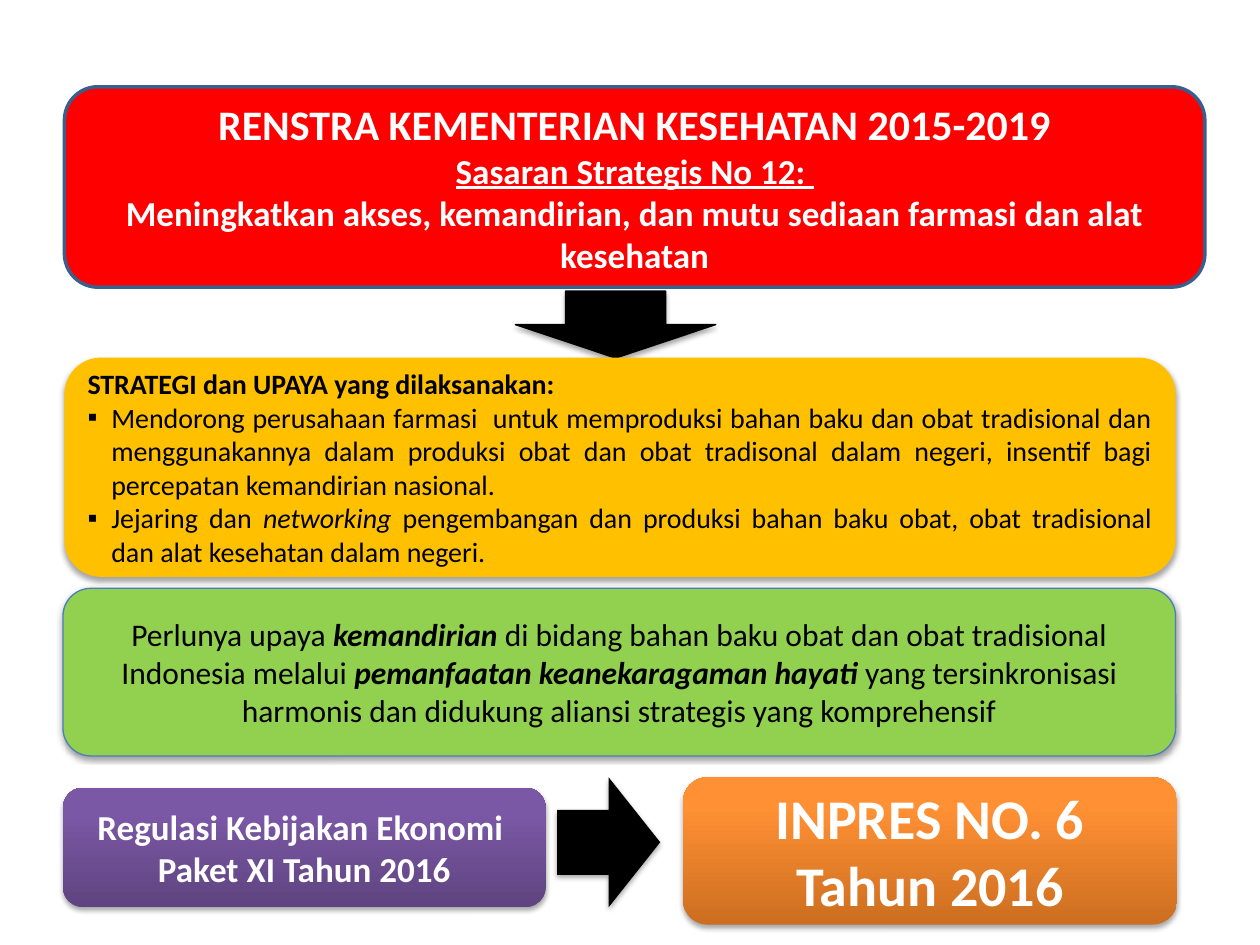
"""Build the slide on the health ministry's strategy and the policies that follow."""
from dataclasses import dataclass, field
from typing import NamedTuple, Optional

from lxml.etree import SubElement
from pptx import Presentation
from pptx.dml.color import RGBColor
from pptx.enum.shapes import MSO_SHAPE as Preset
from pptx.enum.text import MSO_ANCHOR as Anchor, PP_ALIGN as Align
from pptx.oxml.ns import qn
from pptx.util import Cm, Pt

BLACK, WHITE = "000000", "FFFFFF"
BOLD = {"bold": True}
ITALIC = {"italic": True}
BOLD_ITALIC = BOLD | ITALIC
BULLET_INDENT = Cm(0.48)


class Run(NamedTuple):
    text: str
    formats: dict = {}


class Line(NamedTuple):
    color: str
    width: float


class Shadow(NamedTuple):
    opacity: int = 35
    blur: float = 3.1
    distance: float = 1.8


@dataclass
class Para:
    runs: list[Run]
    align: Align = Align.CENTER
    hanging: bool = False
    bullet: str = ""


@dataclass
class Block:
    preset: Preset
    box: tuple[float, float, float, float]
    fill: tuple[str, ...]
    line: Optional[Line] = None
    shadow: Optional[Shadow] = Shadow()
    font: dict = field(default_factory=dict)
    paragraphs: list[Para] = field(default_factory=list)


def rgb(value: str) -> RGBColor:
    return RGBColor.from_string(value)


def font_of(size: int, color: str, **formats) -> dict:
    return {"name": "Calibri", "size": Pt(size), "color": color} | formats


def apply_fill(shape, colors: tuple[str, ...]) -> None:
    if len(colors) == 1:
        shape.fill.solid()
        shape.fill.fore_color.rgb = rgb(colors[0])
        return
    shape.fill.gradient()
    gradient = shape._element.spPr.find(qn("a:gradFill"))
    gradient.find(qn("a:lin")).set("ang", str(270 * 60000))
    stops = gradient.find(qn("a:gsLst"))
    for stop in list(stops):
        stops.remove(stop)
    for position, color in zip((0, 80, 100), colors):
        stop = SubElement(stops, qn("a:gs"), pos=str(position * 1000))
        SubElement(stop, qn("a:srgbClr"), val=color)


def apply_line(shape, line: Optional[Line]) -> None:
    if line is None:
        shape.line.fill.background()
        return
    shape.line.color.rgb = rgb(line.color)
    shape.line.width = Pt(line.width)


def apply_shadow(shape, shadow: Optional[Shadow]) -> None:
    shape.shadow.inherit = False
    if shadow is None:
        return
    effects = shape._element.spPr.find(qn("a:effectLst"))
    outer = SubElement(effects, qn("a:outerShdw"), blurRad=str(Pt(shadow.blur)),
                       dist=str(Pt(shadow.distance)), dir=str(90 * 60000), rotWithShape="0")
    color = SubElement(outer, qn("a:srgbClr"), val=BLACK)
    SubElement(color, qn("a:alpha"), val=str(shadow.opacity * 1000))


def write_paragraph(paragraph, content: Para, font: dict) -> None:
    paragraph.alignment = content.align
    properties = paragraph._p.get_or_add_pPr()
    if content.hanging:
        properties.set("marL", str(BULLET_INDENT))
        properties.set("indent", str(-BULLET_INDENT))
    if content.bullet:
        SubElement(properties, qn("a:buFont"), typeface="Wingdings" if content.bullet == "§" else "Arial")
        SubElement(properties, qn("a:buChar"), char=content.bullet)
    for text, formats in content.runs:
        run = paragraph.add_run()
        run.text = text
        for name, value in (font | formats).items():
            if name == "color":
                run.font.color.rgb = rgb(value)
            else:
                setattr(run.font, name, value)


def draw_block(slide, block: Block) -> None:
    shape = slide.shapes.add_shape(block.preset, *map(Cm, block.box))
    apply_fill(shape, block.fill)
    apply_line(shape, block.line)
    apply_shadow(shape, block.shadow)
    frame = shape.text_frame
    frame.word_wrap = True
    frame.vertical_anchor = Anchor.MIDDLE
    for index, content in enumerate(block.paragraphs):
        paragraph = frame.add_paragraph() if index else frame.paragraphs[0]
        write_paragraph(paragraph, content, block.font)


def bullet(*runs: Run) -> Para:
    return Para(list(runs), Align.JUSTIFY, hanging=True, bullet="▪")


BLOCKS = [
    Block(Preset.DOWN_ARROW, (10.39, 5.87, 4.04, 1.35), (BLACK,), Line(BLACK, 0.75)),
    Block(Preset.ROUNDED_RECTANGLE, (1.3, 7.21, 22.4, 4.42), ("FFC000",),
          font=font_of(16, BLACK), paragraphs=[
              Para([Run("STRATEGI dan UPAYA yang dilaksanakan:", BOLD)], Align.LEFT, hanging=True),
              bullet(Run("Mendorong perusahaan farmasi  untuk memproduksi bahan baku dan obat "
                         "tradisional dan menggunakannya dalam produksi obat dan obat tradisonal "
                         "dalam negeri, insentif bagi percepatan kemandirian nasional.")),
              bullet(Run("Jejaring dan "), Run("networking ", ITALIC),
                     Run("pengembangan dan produksi bahan baku obat, obat tradisional "
                         "dan alat kesehatan dalam negeri."))]),
    Block(Preset.ROUNDED_RECTANGLE, (1.3, 1.75, 22.99, 4.04), ("FF0000",), Line("3A5F8C", 2),
          shadow=None, font=font_of(20, WHITE, bold=True), paragraphs=[
              Para([Run("RENSTRA KEMENTERIAN KESEHATAN 2015-2019", {"size": Pt(24)})]),
              Para([Run("Sasaran Strategis No 12: ", {"underline": True})]),
              Para([Run("Meningkatkan akses, kemandirian, dan mutu sediaan farmasi "
                        "dan alat kesehatan")])]),
    Block(Preset.ROUNDED_RECTANGLE, (1.27, 11.86, 22.43, 3.38), ("92D050",), Line("4B7EBC", 0.75),
          Shadow(38, distance=1.6), font_of(18, BLACK), [
              Para([Run("Perlunya upaya "), Run("kemandirian ", BOLD_ITALIC),
                    Run("di bidang bahan baku obat dan obat tradisional Indonesia melalui "),
                    Run("pemanfaatan keanekaragaman hayati ", BOLD_ITALIC),
                    Run("yang tersinkronisasi harmonis dan didukung aliansi strategis "
                        "yang komprehensif")])]),
    Block(Preset.ROUNDED_RECTANGLE, (1.27, 15.88, 9.73, 2.41), ("5F4480", "7B58A6", "7C57A8"),
          font=font_of(20, WHITE, bold=True), paragraphs=[
              Para([Run("Regulasi Kebijakan Ekonomi ")]), Para([Run("Paket XI Tahun 2016")])]),
    Block(Preset.RIGHT_ARROW, (11.23, 15.67, 2.08, 2.62), (BLACK,)),
    Block(Preset.ROUNDED_RECTANGLE, (13.77, 15.67, 9.96, 2.97), ("CC6E20", "FF9034", "FF9136"),
          font=font_of(32, WHITE, bold=True), paragraphs=[Para([Run("INPRES NO. 6 Tahun 2016")])]),
]


def main() -> None:
    presentation = Presentation()
    presentation.slide_width, presentation.slide_height = Cm(25.4), Cm(19.05)
    slide = presentation.slides.add_slide(presentation.slide_layouts[6])
    for block in BLOCKS:
        draw_block(slide, block)
    presentation.save("out.pptx")


if __name__ == "__main__":
    main()
